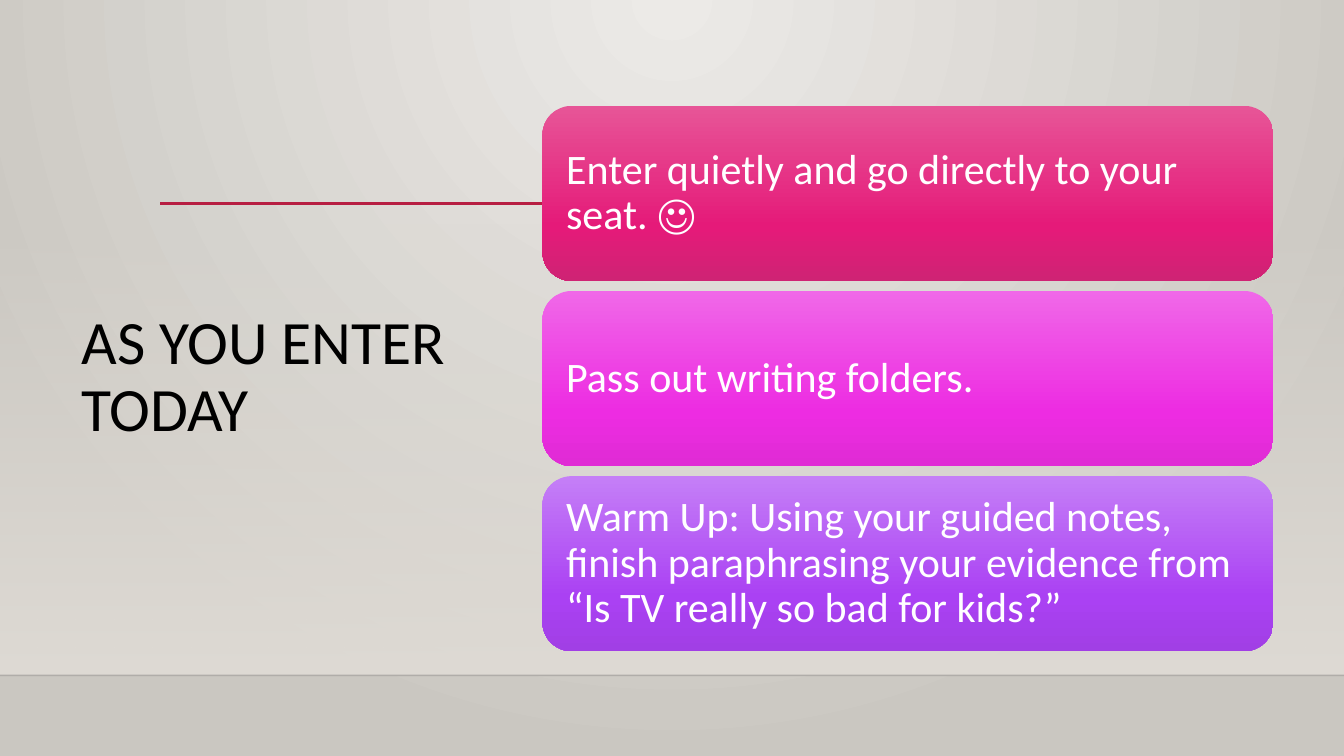
from lxml.etree import SubElement
from pptx import Presentation
from pptx.dml.color import RGBColor
from pptx.enum.shapes import MSO_CONNECTOR, MSO_SHAPE
from pptx.enum.text import MSO_ANCHOR, MSO_AUTO_SIZE, PP_ALIGN
from pptx.oxml.ns import qn
from pptx.util import Inches, Pt

WIDTH, HEIGHT = 13.33, 7.5
FLOOR = 6.7
FRAME = {"word_wrap": True, "auto_size": MSO_AUTO_SIZE.NONE,
         "vertical_anchor": MSO_ANCHOR.MIDDLE}
PARAGRAPH = {"alignment": PP_ALIGN.LEFT, "line_spacing": 0.9}
STEPS = [
    ("Enter quietly and go directly to your seat. ☺", ("E75597", "E51A79", "CF2374")),
    ("Pass out writing folders.", ("F068E8", "ED2CE2", "E02BD5")),
    ("Warm Up: Using your guided notes, finish paraphrasing your evidence from "
     "“Is TV really so bad for kids?”", ("C57FF7", "AA41F3", "A13FE5")),
]


def color(hex_code):
    """Turn a hex string into a colour."""
    return RGBColor.from_string(hex_code)


def apply(target, values):
    """Set every attribute named in a dict of format values."""
    for name, value in values.items():
        setattr(target, name, value)


def set_alpha(color_element, percent):
    """Give a colour element an opacity in percent."""
    SubElement(color_element, qn("a:alpha"), val=str(percent * 1000))


def paint_gradient(fill, properties, stops, focus=None):
    """Fill with (position, hex, opacity) stops, downwards or around a focus."""
    fill.solid()
    solid = properties.find(qn("a:solidFill"))
    gradient = SubElement(properties, qn("a:gradFill"), rotWithShape="1")
    properties.replace(solid, gradient)
    stop_list = SubElement(gradient, qn("a:gsLst"))
    for position, hex_code, opacity in stops:
        stop = SubElement(stop_list, qn("a:gs"), pos=str(position * 1000))
        set_alpha(SubElement(stop, qn("a:srgbClr"), val=hex_code), opacity)
    if focus:
        circle = SubElement(gradient, qn("a:path"), path="circle")
        edges = {side: str(share * 1000) for side, share in zip("ltrb", focus)}
        SubElement(circle, qn("a:fillToRect"), **edges)
    else:
        SubElement(gradient, qn("a:lin"), ang="5400000", scaled="0")


def write_text(frame, text, font, margin):
    """Write one left-aligned paragraph in the middle of a frame."""
    apply(frame, FRAME)
    apply(frame, {f"margin_{side}": Inches(margin)
                  for side in ("left", "top", "right", "bottom")})
    paragraph = frame.paragraphs[0]
    paragraph.text = text
    apply(paragraph, PARAGRAPH)
    apply(paragraph.font, {"name": "Calibri", "size": Pt(font["size"])})
    paragraph.font.color.rgb = color(font["color"])


def add_panel(slide, kind, box, stops):
    """Add a borderless shape with a downward gradient."""
    panel = slide.shapes.add_shape(kind, *map(Inches, box))
    panel.shadow.inherit = False
    panel.line.fill.background()
    paint_gradient(panel.fill, panel._element.spPr, stops)
    return panel


def add_rule(slide, left, right, top, hex_code, weight, opacity=100):
    """Draw a horizontal rule."""
    rule = slide.shapes.add_connector(
        MSO_CONNECTOR.STRAIGHT, *map(Inches, (left, top, right, top)))
    rule.line.width = Pt(weight)
    rule.line.color.rgb = color(hex_code)
    properties = rule._element.spPr
    set_alpha(properties.find(".//" + qn("a:srgbClr")), opacity)
    SubElement(properties, qn("a:effectLst"))


def add_backdrop(slide):
    """Paint the wall, its floor line and the accent rule."""
    paint_gradient(slide.background.fill, slide._element.cSld.bg.bgPr,
                   [(0, "ECEAE7", 100), (100, "CAC7C1", 100)], (43, 0, 43, 100))
    wall_top = 2.21
    add_panel(slide, MSO_SHAPE.RECTANGLE, (0, wall_top, WIDTH, FLOOR - wall_top),
              [(0, "DFDBD5", 0), (100, "DFDBD5", 100)])
    add_rule(slide, 0, WIDTH, FLOOR, "000001", 1, 20)
    add_rule(slide, 1.59, 12.1, 2.02, "B71E42", 2.5)


def add_title(slide, text, box):
    """Place the title placeholder in front of the backdrop."""
    title = slide.shapes.title
    title._element.getparent().append(title._element)
    apply(title, dict(zip(("left", "top", "width", "height"), map(Inches, box))))
    write_text(title.text_frame, text, {"size": 44, "color": "000000"}, 0.1)


def add_steps(slide, steps, box, gap=0.1):
    """Stack equal rounded cards in a box."""
    left, top, width, height = box
    card_height = (height - gap * (len(steps) - 1)) / len(steps)
    for row, (text, shades) in enumerate(steps):
        card_top = top + row * (card_height + gap)
        stops = [(position, shade, 100) for position, shade in zip((0, 69, 100), shades)]
        card = add_panel(slide, MSO_SHAPE.ROUNDED_RECTANGLE,
                         (left, card_top, width, card_height), stops)
        write_text(card.text_frame, text, {"size": 30, "color": "FFFFFF"}, 0.15)


def main():
    """Build and save the slide."""
    deck = Presentation()
    apply(deck, {"slide_width": Inches(WIDTH), "slide_height": Inches(HEIGHT)})
    slide = deck.slides.add_slide(deck.slide_layouts[5])
    add_backdrop(slide)
    add_title(slide, "AS YOU ENTER TODAY", (0.71, 1.51, 3.88, 4.48))
    add_steps(slide, STEPS, (5.38, 1.05, 7.25, 5.41))
    deck.save("out.pptx")


if __name__ == "__main__":
    main()
